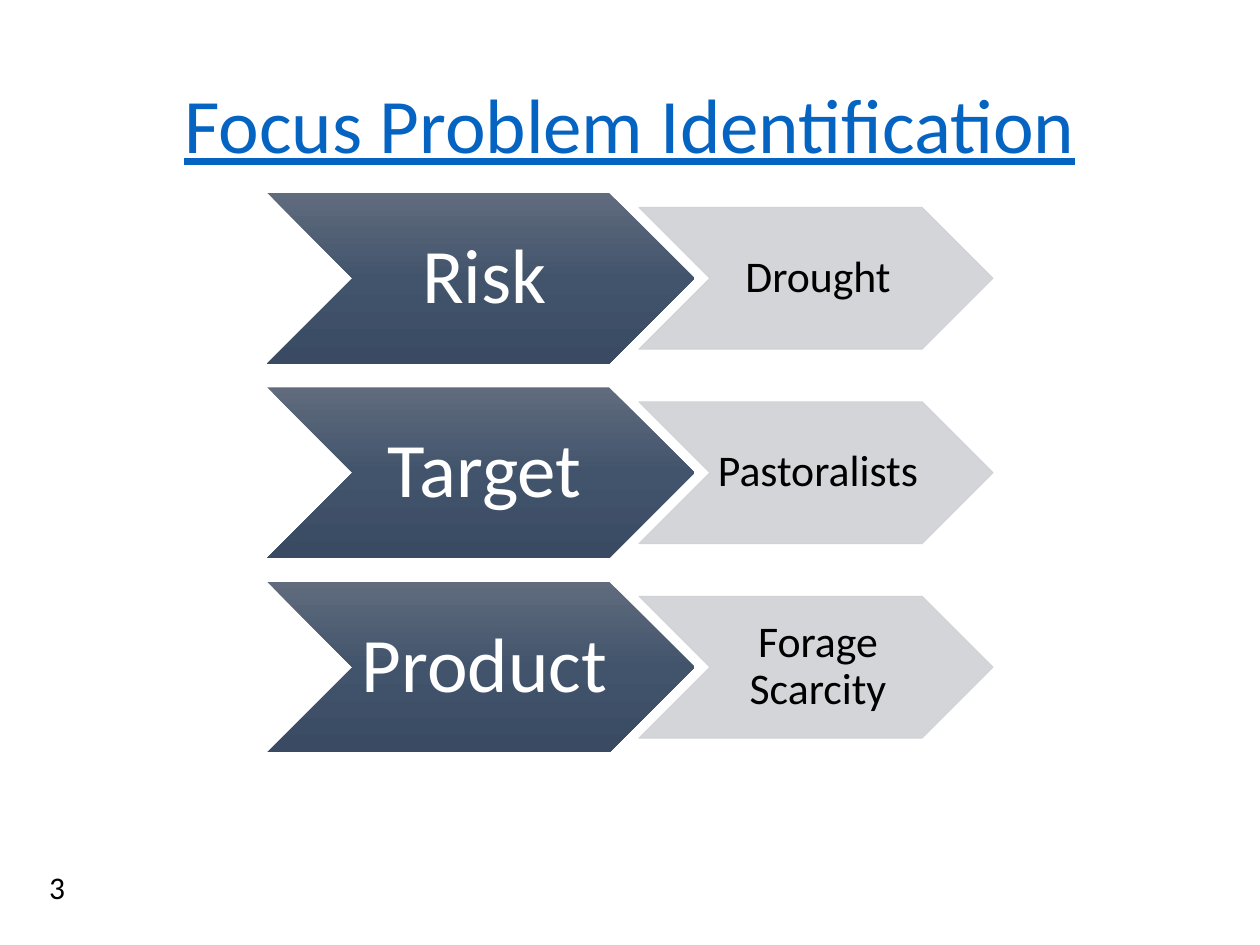
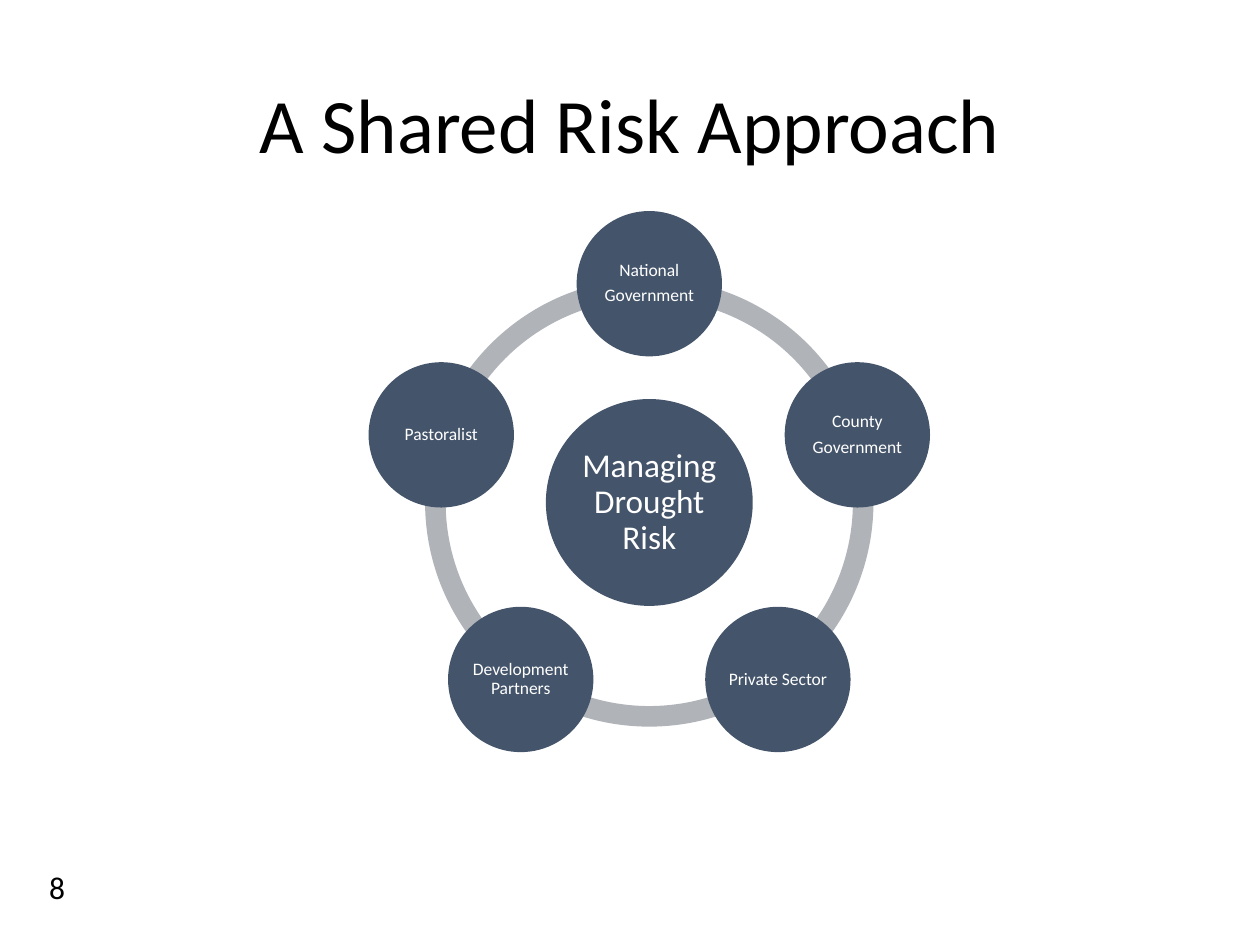
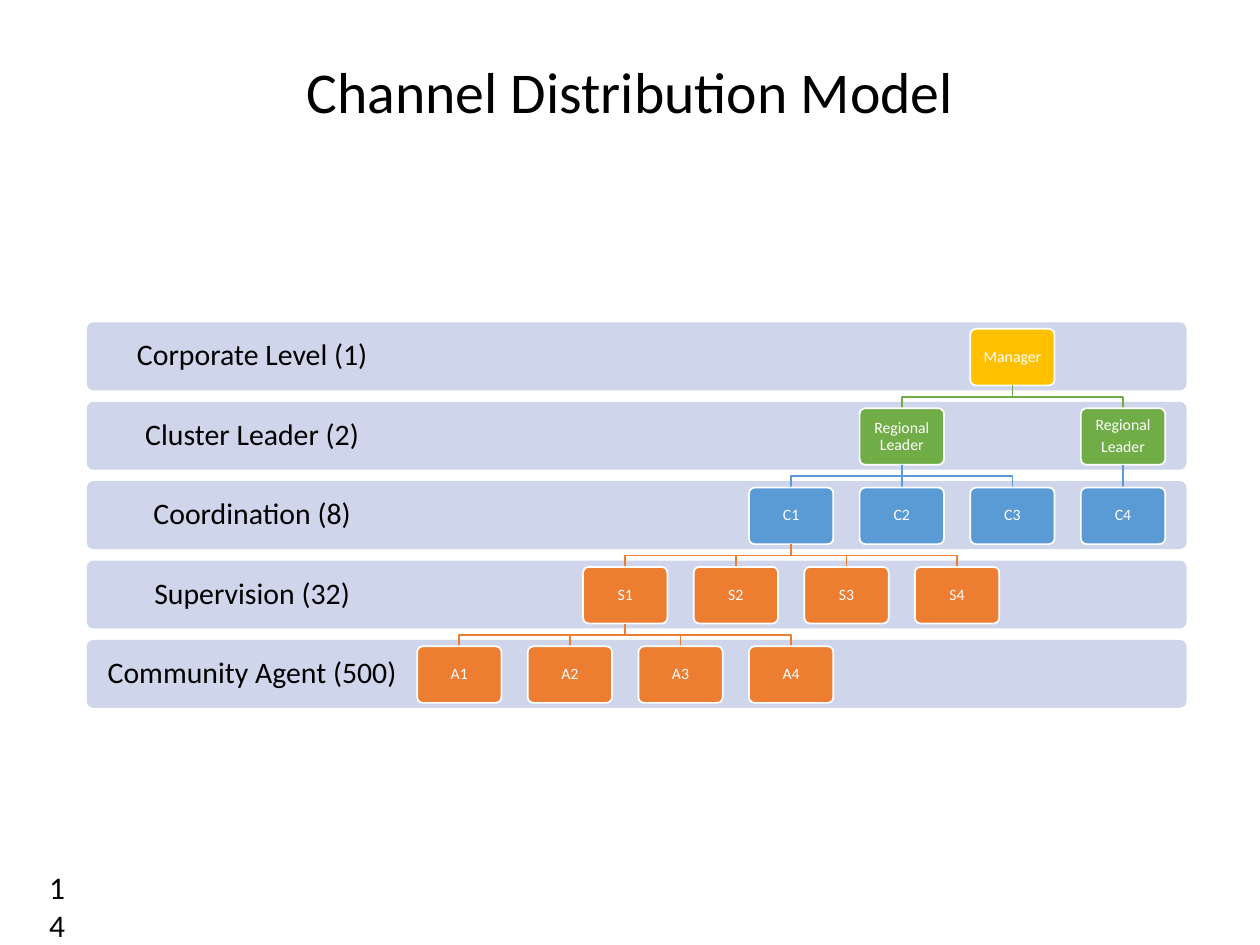
"""Build three slides on shared drought risk and its sales channel."""
from copy import deepcopy
from dataclasses import dataclass
from math import cos, radians, sin
from typing import NamedTuple

from pptx import Presentation as Deck
from pptx.dml.color import RGBColor as Rgb
from pptx.enum.shapes import MSO_CONNECTOR as Wire, MSO_SHAPE as Form
from pptx.enum.text import MSO_ANCHOR as Anchor, PP_ALIGN as Align
from pptx.oxml.ns import qn
from pptx.oxml.xmlchemy import OxmlElement as Tag
from pptx.shapes.autoshape import Shape
from pptx.slide import Slide
from pptx.util import Cm, Pt

FONT = "Calibri"
HUES = {
    "black": "000000", "white": "FFFFFF", "link": "0563C1",
    "steel": "44546A", "ring": "B0B4B9", "pale": "CFD1D4", "band": "CFD5EA",
    "gold": "FFC000", "green": "70AD47", "blue": "5B9BD5", "orange": "ED7D31",
}
SHEEN = ("606B7D", "42546C", "394A62")


class Box(NamedTuple):
    """Place and size in centimetres."""
    left: float
    top: float
    width: float
    height: float


@dataclass
class Style:
    """Look of a text; pads are left, top, right and bottom in centimetres."""
    size: float
    hue: str = "white"
    pads: tuple[float, float, float, float] = (0, 0, 0, 0)
    under: bool = False


class Pair(NamedTuple):
    """A heading chevron and its answer."""
    head: str
    tail: str


class Level(NamedTuple):
    """A band of the channel and the hue of its cards."""
    name: str
    hue: str


class Card(NamedTuple):
    """A card of the channel; up is the column of the card above."""
    text: str
    row: int
    col: float
    up: float | None = None


HEAD = Style(44, pads=(0.15, 0.08, 0, 0.08))
TAIL = Style(25, "black", (0.08, 0.05, 0, 0.05))
HUB = Style(19, pads=(0.08,) * 4)
NODE = Style(10, pads=(0.02,) * 4)
LABEL = Style(17, "black", (0.3, 0.3, 15.8, 0.3))
CARD = Style(9, pads=(0.1,) * 4)

PAIRS = [Pair("Risk", "Drought"), Pair("Target", "Pastoralists"),
         Pair("Product", "Forage Scarcity")]
PEERS = ["National\nGovernment", "County\nGovernment", "Private Sector",
         "Development Partners", "Pastoralist"]
LEVELS = [Level("Corporate Level (1)", "gold"), Level("Cluster Leader (2)", "green"),
          Level("Coordination (8)", "blue"), Level("Supervision (32)", "orange"),
          Level("Community Agent (500)", "orange")]
CARDS = [
    Card("Manager", 0, 5),
    Card("Regional Leader", 1, 4, 5), Card("Regional\nLeader", 1, 6, 5),
    *(Card(f"C{i + 1}", 2, 3 + i, 4 if i < 3 else 6) for i in range(4)),
    *(Card(f"S{i + 1}", 3, 1.5 + i, 3) for i in range(4)),
    *(Card(f"A{i + 1}", 4, i, 1.5) for i in range(4)),
]


def tint(name: str) -> Rgb:
    """Return a named colour."""
    return Rgb.from_string(HUES[name])


def write(shape: Shape, text: str, style: Style) -> None:
    """Set centred text in a shape."""
    frame = shape.text_frame
    frame.text = text
    frame.word_wrap = True
    frame.vertical_anchor = Anchor.MIDDLE
    (frame.margin_left, frame.margin_top,
     frame.margin_right, frame.margin_bottom) = map(Cm, style.pads)
    for para in frame.paragraphs:
        para.alignment = Align.CENTER
        para.line_spacing = 0.9
        for run in para.runs:
            run.font.name = FONT
            run.font.size = Pt(style.size)
            run.font.color.rgb = tint(style.hue)
            if style.under:
                run.font.underline = True
    for para in frame.paragraphs[:-1]:
        para.space_after = Pt(0.35 * style.size)


def draw(slide: Slide, form: Form, box: Box, hue: str) -> Shape:
    """Add a plain filled shape."""
    shape = slide.shapes.add_shape(form, *map(Cm, box))
    shape.shadow.inherit = False
    shape.fill.solid()
    shape.fill.fore_color.rgb = tint(hue)
    shape.line.fill.background()
    return shape


def disc(slide: Slide, x: float, y: float, size: float, hue: str, form: Form = Form.OVAL) -> Shape:
    """Add a round shape about a centre."""
    return draw(slide, form, Box(x - size / 2, y - size / 2, size, size), hue)


def shade(shape: Shape) -> None:
    """Fill a shape with the steel gradient, top to bottom."""
    shape.fill.gradient()
    shape.fill.gradient_angle = 270
    stops = shape.element.spPr.find(qn("a:gradFill")).find(qn("a:gsLst"))
    stops.insert(1, deepcopy(stops[0]))
    for i, (stop, code) in enumerate(zip(shape.fill.gradient_stops, SHEEN)):
        stop.position = i / 2
        stop.color.rgb = Rgb.from_string(code)


def fade(shape: Shape) -> None:
    """Make all colours of a shape slightly clear."""
    for code in shape.element.spPr.iter(qn("a:srgbClr")):
        alpha = Tag("a:alpha")
        alpha.set("val", "90000")
        code.append(alpha)


def start(deck: Deck, title: str, page: int, style: Style, height: float = 3.68) -> Slide:
    """Add a slide with its title and page number."""
    slide = deck.slides.add_slide(deck.slide_layouts[6])
    mark = slide.shapes.add_textbox(*map(Cm, Box(0.74, 17.37, 1.07, 1.8)))
    write(mark, str(page), Style(18, "black", (0.25, 0.13, 0.25, 0.13)))
    mark.text_frame.vertical_anchor = Anchor.TOP
    para = mark.text_frame.paragraphs[0]
    para.alignment = Align.LEFT
    para.line_spacing = 1.0
    head = slide.shapes.add_textbox(*map(Cm, Box(1.27, 0.76, 22.86, height)))
    write(head, title, style)
    return slide


def focus(deck: Deck) -> None:
    """Draw the rows of paired chevrons."""
    slide = start(deck, "Focus Problem Identification", 3, Style(44, "link", under=True))
    for i, pair in enumerate(PAIRS):
        top = 3.89 + 3.92 * i
        big = draw(slide, Form.CHEVRON, Box(5.39, top, 8.61, 3.44), "steel")
        shade(big)
        write(big, pair.head, HEAD)
        small = draw(slide, Form.CHEVRON, Box(12.88, top + 0.29, 7.14, 2.86), "pale")
        small.line.color.rgb = tint("pale")
        small.line.width = Pt(0.5)
        fade(small)
        write(small, pair.tail, TAIL)


def share(deck: Deck) -> None:
    """Draw the ring of partners about the hub."""
    slide = start(deck, "A Shared Risk Approach", 8, Style(44, "black"))
    x, y, reach = 13.09, 10.13, 4.41
    step = 360 / len(PEERS)
    turns = [(270 + step * i) % 360 for i in range(len(PEERS))]
    for turn in turns:
        arc = disc(slide, x, y, 9.04, "ring", Form.BLOCK_ARC)
        arc.adjustments[0] = turn * 0.6
        arc.adjustments[1] = (turn + step) % 360 * 0.6
        arc.adjustments[2] = 0.046
    write(disc(slide, x, y, 4.17, "steel"), "Managing Drought Risk", HUB)
    for turn, name in zip(turns, PEERS):
        angle = radians(turn)
        node = disc(slide, x + reach * cos(angle), y + reach * sin(angle), 2.93, "steel")
        write(node, name, NODE)


def place(row: int, col: float) -> Box:
    """Return the box of a card."""
    return Box(8.41 + 2.23 * col, 6.63 + 1.6 * row, 1.7, 1.14)


def link(slide: Slide, card: Card, hue: str) -> None:
    """Join a card to the one above it."""
    above, below = place(card.row - 1, card.up), place(card.row, card.col)
    x1, x2 = (Cm(box.left + box.width / 2) for box in (above, below))
    y1, y2 = Cm(above.top + above.height), Cm(below.top)
    if x1 == x2:
        line = slide.shapes.add_connector(Wire.STRAIGHT, x1, y1, x2, y2)
        line.element.spPr.append(Tag("a:effectLst"))
    else:
        mid = (y1 + y2) // 2
        pen = slide.shapes.build_freeform(x1, y1)
        pen.add_line_segments([(x1, mid), (x2, mid), (x2, y2)], close=False)
        line = pen.convert_to_shape()
        line.shadow.inherit = False
        line.fill.background()
    line.line.color.rgb = tint(hue)
    line.line.width = Pt(1)


def channel(deck: Deck) -> None:
    """Draw the bands and the tree of cards."""
    slide = start(deck, "Channel Distribution Model", 14, Style(33, "black"), 2.29)
    for i, level in enumerate(LEVELS):
        band = draw(slide, Form.ROUNDED_RECTANGLE, Box(1.75, 6.5 + 1.6 * i, 22.17, 1.37), "band")
        band.adjustments[0] = 0.1
        write(band, level.name, LABEL)
    for card in CARDS:
        hue = LEVELS[card.row].hue
        if card.up is not None:
            link(slide, card, hue)
        shape = draw(slide, Form.ROUNDED_RECTANGLE, place(card.row, card.col), hue)
        shape.adjustments[0] = 0.1
        shape.line.color.rgb = tint("white")
        shape.line.width = Pt(1)
        write(shape, card.text, CARD)


def main() -> None:
    """Build and save the deck."""
    deck = Deck()
    deck.slide_width, deck.slide_height = Cm(25.4), Cm(19.05)
    focus(deck)
    share(deck)
    channel(deck)
    deck.save("out.pptx")


if __name__ == "__main__":
    main()
